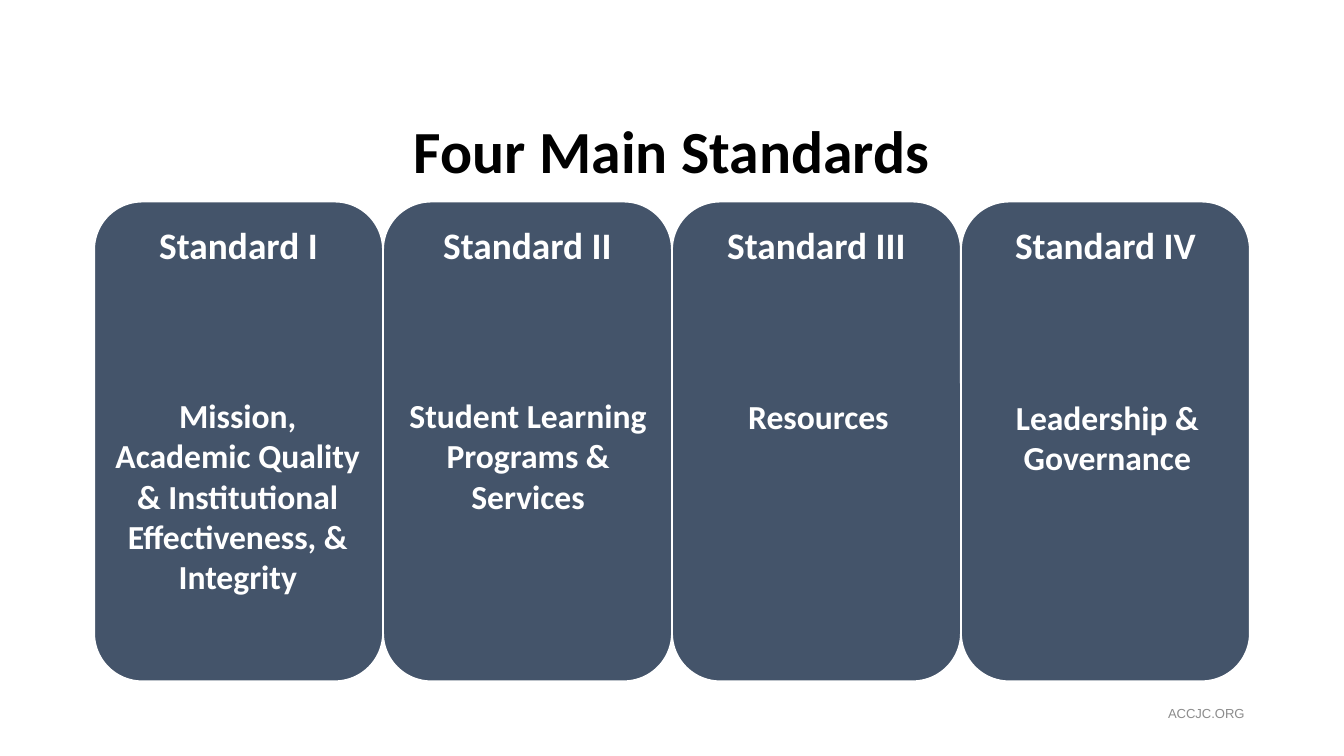
from pptx import Presentation
from pptx.dml.color import RGBColor
from pptx.enum.shapes import MSO_SHAPE
from pptx.enum.text import MSO_ANCHOR, PP_ALIGN
from pptx.util import Inches, Pt

COLORS = {"card": "44546A", "light": "FFFFFF", "title": "000000", "footer": "8C8C8C"}

CARD_WIDTH = 2.15
STANDARDS = [
    ("Standard I", "Mission, Academic Quality & Institutional Effectiveness, & Integrity",
     (0.02, 1.35, 2.1, 1.82)),
    ("Standard II", "Student Learning Programs & Services", (0.08, 1.35, 2, 1.82)),
    ("Standard III", "Resources", (0.09, 1.36, 2, 1.81)),
    ("Standard IV", "Leadership & Governance", (0.09, 1.36, 2, 1.92)),
]


def color(name):
    return RGBColor.from_string(COLORS[name])


def write(shape, text, size, color_name, align=PP_ALIGN.CENTER, anchor=MSO_ANCHOR.TOP,
          font="Calibri", bold=True, insets=(0.1, 0.05)):
    frame = shape.text_frame
    frame.word_wrap = True
    frame.vertical_anchor = anchor
    frame.margin_left = frame.margin_right = Inches(insets[0])
    frame.margin_top = frame.margin_bottom = Inches(insets[1])
    paragraph = frame.paragraphs[0]
    paragraph.alignment = align
    run = paragraph.add_run()
    run.text = text
    run.font.name = font
    run.font.size = Pt(size)
    run.font.bold = bold
    run.font.color.rgb = color(color_name)
    return paragraph


def add_rounded_box(slide, left, top, width, height):
    box = slide.shapes.add_shape(MSO_SHAPE.ROUNDED_RECTANGLE, Inches(left), Inches(top),
                                 Inches(width), Inches(height))
    box.shadow.inherit = False
    return box


def add_title(slide, left, top, width, height):
    title = slide.shapes.title
    title.left, title.top = Inches(left), Inches(top)
    title.width, title.height = Inches(width), Inches(height)
    heading = write(title, "Four Main Standards", 32, "title",
                    anchor=MSO_ANCHOR.MIDDLE, insets=(0.07, 0.04))
    heading.line_spacing = 0.9


def add_card(slide, left, top, width, height, heading):
    card = add_rounded_box(slide, left, top, width, height)
    card.fill.solid()
    card.fill.fore_color.rgb = color("card")
    card.line.color.rgb = color("light")
    card.line.width = Pt(1)
    write(card, heading, 20, "light")


def add_topic(slide, left, top, width, height, topic):
    area = add_rounded_box(slide, left, top, width, height)
    area.fill.background()
    area.line.fill.background()
    write(area, topic, 18, "light", insets=(0, 0))


def add_standards(slide, left, top, height):
    for index, (heading, topic, (dx, dy, topic_width, topic_height)) in enumerate(STANDARDS):
        card_left = left + index * CARD_WIDTH
        add_card(slide, card_left, top, CARD_WIDTH, height, heading)
        add_topic(slide, card_left + dx, top + dy, topic_width, topic_height, topic)


def add_footer(slide, left, top, width, height):
    footer = slide.shapes.add_textbox(Inches(left), Inches(top), Inches(width), Inches(height))
    write(footer, "ACCJC.ORG", 7, "footer", align=PP_ALIGN.RIGHT, anchor=MSO_ANCHOR.MIDDLE,
          font="Arial", bold=False, insets=(0.06, 0.03))


def main():
    deck = Presentation()
    deck.slide_width = Inches(10)
    deck.slide_height = deck.slide_width * 9 // 16
    slide = deck.slides.add_slide(deck.slide_layouts[5])
    add_title(slide, 0.69, 0.9, 8.62, 0.49)
    add_standards(slide, 0.7, 1.5, 3.57)
    add_footer(slide, 7.96, 5.21, 1.36, 0.19)
    deck.save("out.pptx")


if __name__ == "__main__":
    main()
